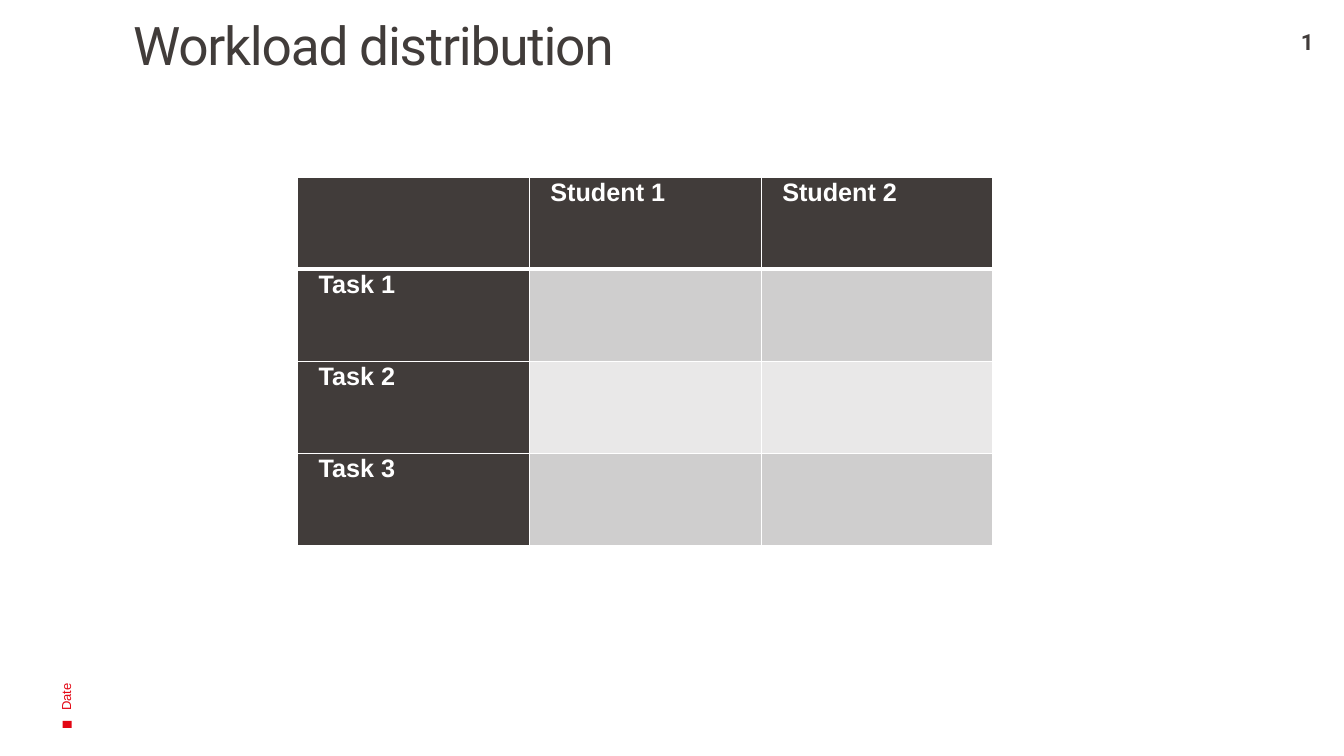
from dataclasses import dataclass

from lxml import etree
from pptx import Presentation
from pptx.dml.color import RGBColor
from pptx.enum import shapes, text
from pptx.oxml import ns
from pptx.util import Inches, Pt

COLORS = {
    "dark": "413C3A",
    "red": "E30613",
    "white": "FFFFFF",
    "odd": "CFCECE",
    "even": "E9E8E8",
}
STUDENTS = ["Student 1", "Student 2"]
TASKS = ["Task 1", "Task 2", "Task 3"]
COL_WIDTH, ROW_HEIGHT = 2.3, 0.9125


@dataclass
class Label:
    text: str
    left: float
    top: float
    width: float
    height: float
    size: float
    font: str
    color: str
    bold: bool = False
    rotation: int = 0
    align: text.PP_ALIGN = text.PP_ALIGN.LEFT
    anchor: text.MSO_ANCHOR = text.MSO_ANCHOR.TOP
    margins: tuple[float, ...] = (0.1, 0.05, 0.1, 0.05)


TITLE = Label("Workload distribution", 1.12, 0.19, 11.38, 1.56, 38, "Roboto", "dark",
              margins=(0.2, 0, 0.08, 0.05))
LABELS = [
    Label("Date", -1.78, 4.05, 4.87, 1.33, 9.3, "Arial", "red", rotation=270,
          anchor=text.MSO_ANCHOR.MIDDLE),
    Label("1", 12.59, 0.28, 0.75, 0.24, 16, "Roboto", "dark", bold=True,
          align=text.PP_ALIGN.CENTER, margins=(0.1, 0, 0.1, 0)),
]


def rgb(name: str) -> RGBColor:
    return RGBColor.from_string(COLORS[name])


def style_run(r, size: float, font: str, color: str, bold: bool) -> None:
    r.font.size = Pt(size)
    r.font.name = font
    r.font.bold = bold
    r.font.color.rgb = rgb(color)


def format_label(sp, label: Label) -> None:
    sp.left, sp.top = Inches(label.left), Inches(label.top)
    sp.width, sp.height = Inches(label.width), Inches(label.height)
    sp.rotation = label.rotation
    tf = sp.text_frame
    tf.text = label.text
    tf.word_wrap = True
    tf.auto_size = text.MSO_AUTO_SIZE.NONE
    tf.vertical_anchor = label.anchor
    (tf.margin_left, tf.margin_top,
     tf.margin_right, tf.margin_bottom) = map(Inches, label.margins)
    p = tf.paragraphs[0]
    p.alignment = label.align
    style_run(p.runs[0], label.size, label.font, label.color, label.bold)


def add_title(s) -> None:
    sp = s.shapes.title
    format_label(sp, TITLE)
    p = sp.text_frame.paragraphs[0]
    p.line_spacing = 0.9
    p.runs[0]._r.get_or_add_rPr().set("spc", "-90")


def add_marker(s) -> None:
    sp = s.shapes.add_shape(shapes.MSO_SHAPE.RECTANGLE,
                            Inches(0.63), Inches(7.14), Inches(0.07), Inches(0.09))
    sp.rotation = 270
    sp.shadow.inherit = False
    sp.fill.solid()
    sp.fill.fore_color.rgb = rgb("red")
    sp.line.fill.background()


def add_borders(cell, widths: dict[str, int]) -> None:
    """Draw white cell borders; call before the fill, which must follow them."""
    tc_pr = cell._tc.get_or_add_tcPr()
    for side, width in widths.items():
        ln = etree.SubElement(tc_pr, ns.qn(f"a:ln{side}"), w=str(Pt(width)))
        fill = etree.SubElement(ln, ns.qn("a:solidFill"))
        etree.SubElement(fill, ns.qn("a:srgbClr"), val=COLORS["white"])


def format_heading(cell, heading: str) -> None:
    cell.margin_left = cell.margin_right = Inches(0.07)
    cell.margin_top = cell.margin_bottom = 0
    cell.text_frame.text = heading
    p = cell.text_frame.paragraphs[0]
    p.alignment = text.PP_ALIGN.JUSTIFY
    p.line_spacing = 1.05
    p._p.get_or_add_pPr().set("indent", str(Inches(0.14)))
    style_run(p.runs[0], 18, "Arial", "white", True)


def add_workload_table(s) -> None:
    grid = [["", *STUDENTS]] + [[task] + [""] * len(STUDENTS) for task in TASKS]
    n_rows, n_cols = len(grid), len(grid[0])
    table = s.shapes.add_table(n_rows, n_cols, Inches(2.95), Inches(1.76),
                               Inches(n_cols * COL_WIDTH),
                               Inches(n_rows * ROW_HEIGHT)).table
    table.first_col = True
    for i, row in enumerate(grid):
        for j, heading in enumerate(row):
            cell = table.cell(i, j)
            add_borders(cell, {"L": 1, "R": 1, "T": 3 if i == 1 else 1,
                               "B": 3 if i == 0 else 1})
            cell.fill.solid()
            body = "odd" if i % 2 else "even"
            cell.fill.fore_color.rgb = rgb("dark" if i == 0 or j == 0 else body)
            if heading:
                format_heading(cell, heading)


def main() -> None:
    prs = Presentation()
    prs.slide_width, prs.slide_height = Inches(13.33), Inches(7.5)
    s = prs.slides.add_slide(prs.slide_layouts[5])
    add_marker(s)
    add_title(s)
    for label in LABELS:
        format_label(s.shapes.add_textbox(0, 0, 0, 0), label)
    add_workload_table(s)
    prs.save("out.pptx")


if __name__ == "__main__":
    main()
